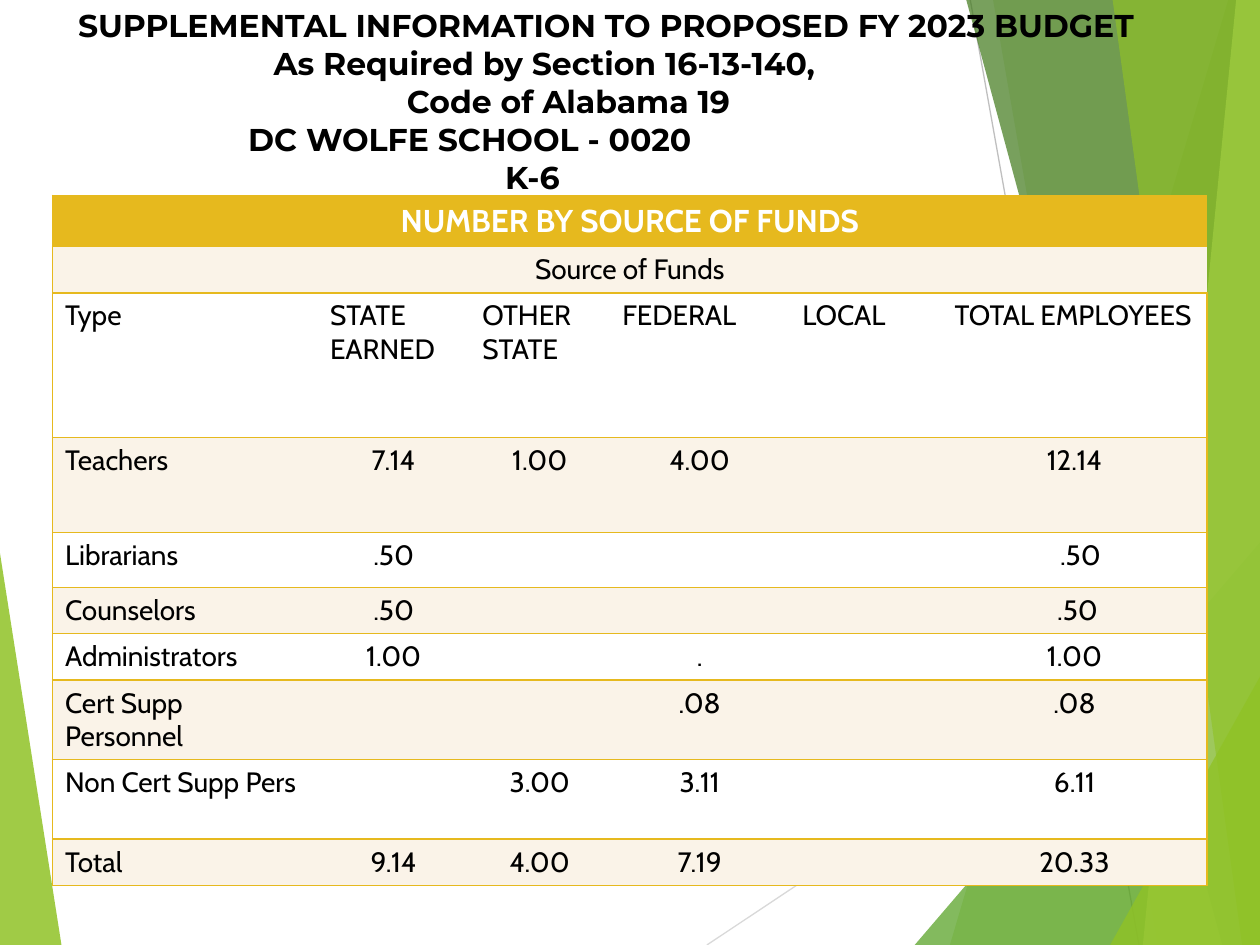
from lxml import etree
from pptx import Presentation
from pptx import util as u
from pptx.dml.color import RGBColor
from pptx.enum import shapes, text
from pptx.oxml import ns

LIME = RGBColor(0x90, 0xC2, 0x26)
LEAF = RGBColor(0x54, 0xA0, 0x21)
MOSS = RGBColor(0x3F, 0x78, 0x19)
PALE = RGBColor(0xC0, 0xE4, 0x74)
SILVER = RGBColor(0xD9, 0xD9, 0xD9)
GREY = RGBColor(0xBF, 0xBF, 0xBF)
GOLD = RGBColor(0xE6, 0xB9, 0x1E)
CREAM = RGBColor(0xFA, 0xF3, 0xE8)
WHITE = RGBColor(0xFF, 0xFF, 0xFF)
BLACK = RGBColor(0, 0, 0)

WIDE, HIGH, EDGE = 25.4, 19.05, 25.43
PLAIN = "{2D5ABB26-0587-4C30-8999-92F81FD0307C}"

HEADS = [
    ("SUPPLEMENTAL INFORMATION TO PROPOSED FY 2023 BUDGET", 0.89),
    ("As Required by Section 16-13-140,", 4.83),
    ("Code of Alabama 19", 7.52),
    ("DC WOLFE SCHOOL - 0020", 4.32),
    ("K-6", 9.5),
]
COLS = [5.34, 3.07, 2.82, 3.63, 3.07, 5.34]
ROWS = [1.03, 0.92, 2.92, 1.91, 1.11, 0.92, 0.92, 1.6, 1.6, 0.92]
CELLS = [
    ["NUMBER BY SOURCE OF FUNDS"],
    ["Source of Funds"],
    ["Type", "STATE\nEARNED", "OTHER STATE", "FEDERAL", "LOCAL", "TOTAL EMPLOYEES"],
    ["Teachers", "7.14", "1.00", "4.00", "", "12.14"],
    ["Librarians", ".50", "", "", "", ".50"],
    ["Counselors", ".50", "", "", "", ".50"],
    ["Administrators", "1.00", "", ".", "", "1.00"],
    ["Cert Supp Personnel", "", "", ".08", "", ".08"],
    ["Non Cert Supp Pers", "", "3.00", "3.11", "", "6.11"],
    ["Total", "9.14", "4.00", "7.19", "", "20.33"],
]
SHIFTS = {(4, 5): 0.24, (5, 5): 0.12}


def write(para, words, font="Cabin", size=16, color=BLACK, bold=False,
          align=text.PP_ALIGN.LEFT, indent=0):
    para.alignment = align
    if indent:
        para._p.get_or_add_pPr().set("marL", str(u.Cm(indent)))
    if not words:
        para._p.get_or_add_endParaRPr().set("sz", str(size * 100))
        return
    run = para.add_run()
    run.text = words
    run.font.name, run.font.size, run.font.bold = font, u.Pt(size), bold
    run.font.color.rgb = color


class Deck:
    def __init__(self):
        self.show = Presentation()
        self.show.slide_width, self.show.slide_height = u.Cm(WIDE), u.Cm(HIGH)
        self.slide = self.show.slides.add_slide(self.show.slide_layouts[5])
        self.items = self.slide.shapes

    def facet(self, points, color, alpha):
        spots = [(u.Cm(x), u.Cm(y)) for x, y in points]
        form = self.items.build_freeform(*spots[0])
        form.add_line_segments(spots[1:])
        shape = form.convert_to_shape()
        shape.shadow.inherit = False
        shape.line.fill.background()
        shape.fill.solid()
        shape.fill.fore_color.rgb = color
        tint = shape._element.spPr.find(".//" + ns.qn("a:srgbClr"))
        etree.SubElement(tint, ns.qn("a:alpha")).set("val", str(alpha * 1000))

    def line(self, ends, color):
        rule = self.items.add_connector(
            shapes.MSO_CONNECTOR.STRAIGHT, *[u.Cm(v) for v in ends])
        rule.line.color.rgb, rule.line.width = color, u.Pt(0.75)
        etree.SubElement(rule._element.spPr, ns.qn("a:effectLst"))

    def title(self, heads, left, top, width, height):
        box = self.items.title
        box.left, box.top, box.width, box.height = map(u.Cm, (left, top, width, height))
        self.items._spTree.append(box._element)
        frame = box.text_frame
        frame.word_wrap = True
        frame.auto_size = text.MSO_AUTO_SIZE.SHAPE_TO_FIT_TEXT
        frame.vertical_anchor = text.MSO_ANCHOR.TOP
        for i, (words, indent) in enumerate(heads):
            para = frame.add_paragraph() if i else frame.paragraphs[0]
            write(para, words, font="Montserrat", size=18, bold=True, indent=indent)

    def border(self, cell, sides):
        props = cell._tc.get_or_add_tcPr()
        for side in sides:
            edge = etree.SubElement(props, ns.qn("a:ln" + side), w=str(u.Pt(1)))
            fill = etree.SubElement(edge, ns.qn("a:solidFill"))
            etree.SubElement(fill, ns.qn("a:srgbClr"), val=str(GOLD))

    def table(self, left, top):
        grid = self.items.add_table(
            len(ROWS), len(COLS), u.Cm(left), u.Cm(top),
            u.Cm(sum(COLS)), u.Cm(sum(ROWS))).table
        grid.first_row = grid.horz_banding = False
        grid._tbl.tblPr.find(ns.qn("a:tableStyleId")).text = PLAIN
        for col, width in zip(grid.columns, COLS):
            col.width = u.Cm(width)
        for r, height in enumerate(ROWS):
            grid.rows[r].height = u.Cm(height)
            if r < 2:
                grid.cell(r, 0).merge(grid.cell(r, len(COLS) - 1))
            for c in range(len(COLS)):
                cell = grid.cell(r, c)
                self.border(cell, "L" * (c == 0) + "R" * (c == len(COLS) - 1) + "TB")
                cell.fill.solid()
                cell.fill.fore_color.rgb = GOLD if r == 0 else CREAM if r % 2 else WHITE
                self.entry(cell, r, c)

    def entry(self, cell, r, c):
        words = CELLS[r][c] if c < len(CELLS[r]) else ""
        mid = r < 2 or (r > 2 and c > 0)
        look = dict(size=18, color=WHITE, bold=True) if r == 0 else {}
        for i, part in enumerate(words.split("\n")):
            para = cell.text_frame.add_paragraph() if i else cell.text_frame.paragraphs[0]
            write(para, part, indent=SHIFTS.get((r, c), 0),
                  align=text.PP_ALIGN.CENTER if mid else text.PP_ALIGN.LEFT, **look)


def band(head, foot):
    return [(head, 0), (foot, HIGH), (EDGE, HIGH), (EDGE, 0)]


def wedge(foot, rise):
    return [(foot, HIGH), (EDGE, rise), (EDGE, HIGH)]


def main():
    deck = Deck()
    deck.facet([(0, 11.15), (1.24, HIGH), (0, HIGH)], LIME, 85)
    deck.line((14.25, HIGH, EDGE, 11.61), SILVER)
    deck.line((19.56, 0, 22.96, HIGH), GREY)
    for points, color, alpha in [
        (band(24.76, 19.15), LIME, 30),
        (band(20.02, 23.34), LIME, 20),
        (wedge(18.44, 10.9), LEAF, 72),
        (band(19.48, 24.64), MOSS, 70),
        (band(24.92, 23.04), PALE, 70),
        (band(22.43, 25.04), LIME, 65),
        (wedge(22.38, 13.59), LIME, 80),
    ]:
        deck.facet(points, color, alpha)
    deck.title(HEADS, 0.43, 0, 24.97, 4.11)
    deck.table(1.06, 3.94)
    deck.show.save("out.pptx")


if __name__ == "__main__":
    main()
